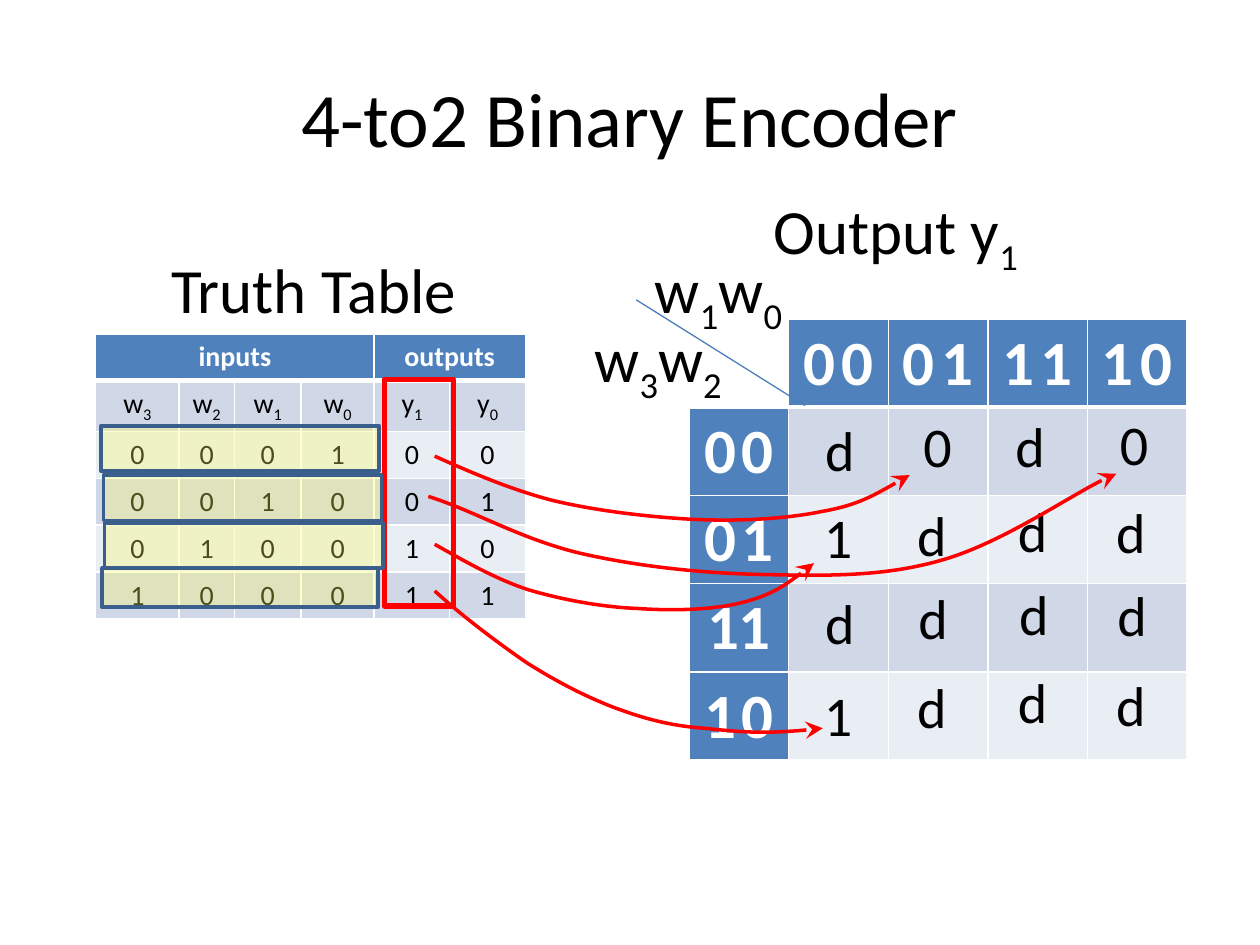
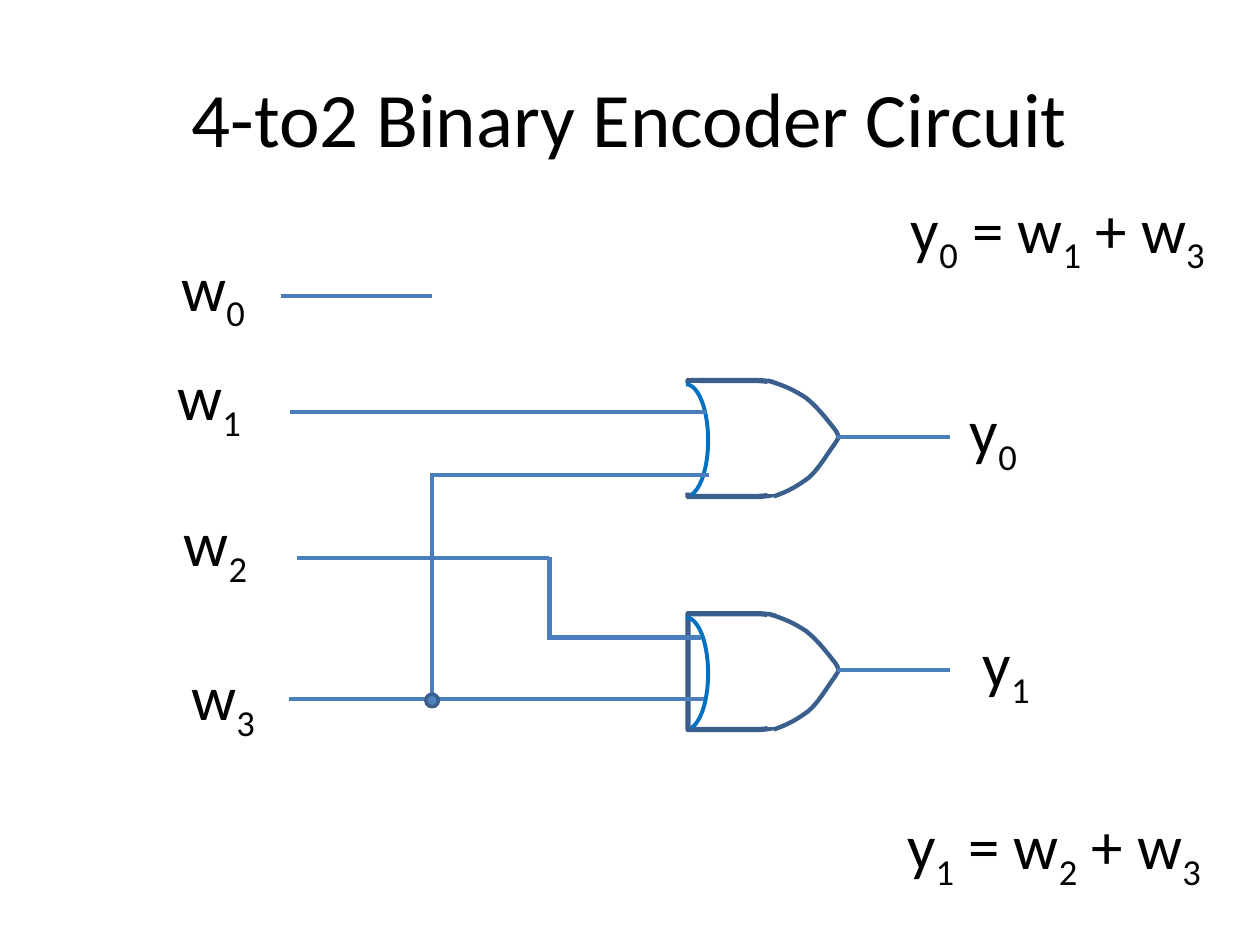
from lxml.etree import SubElement
from pptx import Presentation
from pptx.dml.color import RGBColor as RGB
from pptx.enum.shapes import MSO_CONNECTOR as CONNECTOR, MSO_SHAPE as SHAPE
from pptx.enum.text import MSO_ANCHOR as ANCHOR, PP_ALIGN as ALIGN
from pptx.oxml.ns import qn
from pptx.util import Pt

PX = 9144
FONT = "Calibri"
COLORS = {
    "ink": "000000", "white": "FFFFFF", "header": "4F81BD", "band": "D0D8E8",
    "light": "E9EDF4", "wire": "4B7EBC", "edge": "3A5F8C", "curve": "0070C0",
    "red": "FF0000", "highlight": "FFFF5B",
}


def color(name):
    return RGB.from_string(COLORS[name])


class Deck:
    def __init__(self):
        self.prs = Presentation()
        self.prs.slide_width, self.prs.slide_height = 1000 * PX, 750 * PX
        self.slide = None

    def new_slide(self, heading):
        self.slide = self.prs.slides.add_slide(self.prs.slide_layouts[5])
        title = self.slide.shapes.title
        title.left, title.top, title.width, title.height = (n * PX for n in (50, 30, 900, 125))
        title.text_frame.vertical_anchor = ANCHOR.MIDDLE
        self.put_text(title.text_frame, heading, 44, align=ALIGN.CENTER)

    def put_text(self, frame, text, size, ink="ink", bold=False, align=ALIGN.LEFT, gap=None):
        paragraph = frame.paragraphs[0]
        paragraph.alignment = align
        font = paragraph.font
        font.name, font.size, font.bold = FONT, Pt(size), bold
        font.color.rgb = color(ink)
        if gap:
            for piece in (text[0], " ", text[-1]):
                run = paragraph.add_run()
                run.text = piece
                if piece == " ":
                    run.font.size = Pt(gap)
            return
        first, *indexed = text.split("_")
        paragraph.add_run().text = first
        for part in indexed:
            subscript = paragraph.add_run()
            subscript.text = part[0]
            subscript.font._element.set("baseline", "-25000")
            if part[1:]:
                paragraph.add_run().text = part[1:]

    def label(self, text, left, top, width, height=71, size=36):
        box = self.slide.shapes.add_textbox(left * PX, top * PX, width * PX, height * PX)
        box.text_frame.word_wrap = True
        self.put_text(box.text_frame, text, size)

    def finish(self, shape, fill, line, weight):
        shape.shadow.inherit = False
        if fill:
            shape.fill.solid()
            shape.fill.fore_color.rgb = color(fill)
        else:
            shape.fill.background()
        if line:
            shape.line.color.rgb = color(line)
            shape.line.width = Pt(weight)
        else:
            shape.line.fill.background()
        return shape

    def shape(self, kind, left, top, width, height, fill=None, line=None, weight=2, opacity=None):
        shape = self.slide.shapes.add_shape(kind, left * PX, top * PX, width * PX, height * PX)
        self.finish(shape, fill, line, weight)
        if opacity:
            tint = shape.element.spPr.find(qn("a:solidFill"))[0]
            SubElement(tint, qn("a:alpha"), val=str(opacity * 1000))
        return shape

    def wire(self, x1, y1, x2, y2, weight=2.5):
        wire = self.slide.shapes.add_connector(
            CONNECTOR.STRAIGHT, x1 * PX, y1 * PX, x2 * PX, y2 * PX)
        wire.line.color.rgb = color("wire")
        wire.line.width = Pt(weight)
        SubElement(wire.element.spPr, qn("a:effectLst"))

    def curve(self, points, line, weight, arrow=False):
        builder = self.slide.shapes.build_freeform(*points[0], scale=PX)
        builder.add_line_segments(points[1:], close=False)
        shape = self.finish(builder.convert_to_shape(), None, line, weight)
        outline = shape.element.spPr.find(".//" + qn("a:path"))
        segments = outline.findall(qn("a:lnTo"))
        for start in range(0, len(segments), 3):
            bezier = SubElement(outline, qn("a:cubicBezTo"))
            for segment in segments[start:start + 3]:
                bezier.append(segment[0])
                outline.remove(segment)
        if arrow:
            SubElement(shape.element.spPr.find(qn("a:ln")), qn("a:tailEnd"),
                       type="stealth", w="lg", len="lg")

    def table(self, left, top, widths, rows, row_height):
        table = self.slide.shapes.add_table(
            rows, len(widths), left * PX, top * PX,
            sum(widths) * PX, rows * row_height * PX).table
        for column, width in zip(table.columns, widths):
            column.width = width * PX
        return table

    def cell(self, table, row, column, fill):
        cell = table.cell(row, column)
        weights = {"L": 1, "R": 1, "T": 3 if row == 1 else 1, "B": 1 if row else 3}
        for side, weight in weights.items():
            border = SubElement(cell._tc.get_or_add_tcPr(), qn("a:ln" + side),
                                w=str(Pt(weight)))
            paint = SubElement(border, qn("a:solidFill"))
            SubElement(paint, qn("a:srgbClr"), val=COLORS["white"])
        cell.fill.solid()
        cell.fill.fore_color.rgb = color(fill)
        return cell


def band(row):
    return "band" if row % 2 else "light"


def truth_table(deck):
    rows = [
        ("inputs", "", "", "", "outputs", ""),
        ("w_3", "w_2", "w_1", "w_0", "y_1", "y_0"),
        *("000100", "001001", "010010", "100011"),
    ]
    table = deck.table(76, 265, (66, 44, 53, 58, 60, 60), len(rows), 36)
    table.cell(0, 0).merge(table.cell(0, 3))
    table.cell(0, 4).merge(table.cell(0, 5))
    for r, values in enumerate(rows):
        for c, value in enumerate(values):
            cell = deck.cell(table, r, c, band(r) if r else "header")
            if value:
                deck.put_text(cell.text_frame, value, 16, "ink" if r else "white",
                              not r, ALIGN.CENTER)
            if not r:
                cell.vertical_anchor = ANCHOR.MIDDLE
    deck.label("Truth Table", 126, 194, 252)


def karnaugh_map(deck):
    table = deck.table(547, 253, (79,) * 5, 5, 70)
    headings = {
        (0, 1): ("00", 16), (0, 2): ("01", 18), (0, 3): ("11", 16), (0, 4): ("10", 20),
        (1, 0): ("00", 14), (2, 0): ("01", 14), (3, 0): ("11", None), (4, 0): ("10", 14),
    }
    for r in range(5):
        for c in range(5):
            if (r, c) in headings:
                code, gap = headings[r, c]
                cell = deck.cell(table, r, c, "header")
                cell.vertical_anchor = ANCHOR.MIDDLE
                deck.put_text(cell.text_frame, code, 36, "white", True, ALIGN.CENTER, gap)
            else:
                deck.cell(table, r, c, band(r) if r else "white")
    deck.wire(639, 322, 505, 238, 0.75)
    deck.label("w_1w_0", 510, 194, 136)
    deck.label("w_3w_2", 462, 249, 141)
    deck.label("Output y_1", 604, 147, 228)
    entries = [
        ("d0d0", (645, 723, 796, 879), (325, 322, 322, 320)),
        ("1ddd", (644, 718, 798, 876), (394, 392, 389, 390)),
        ("dddd", (645, 719, 799, 877), (462, 458, 455, 456)),
        ("1ddd", (644, 718, 798, 876), (535, 529, 525, 527)),
    ]
    for values, lefts, tops in entries:
        for value, left, top in zip(values, lefts, tops):
            deck.label(value, left, top, 48, 64, 32)


def mapping_arrows(deck):
    deck.shape(SHAPE.RECTANGLE, 305, 301, 55, 180, line="red", weight=3)
    highlights = [(80, 338, 221, 36), (82, 377, 221, 36), (83, 415, 221, 36), (81, 451, 219, 31)]
    arrows = [
        [(345, 362), (374, 375), (404, 388), (438, 397), (471, 405), (512, 410), (547, 412),
         (583, 414), (623, 412), (652, 406), (681, 401), (701, 389), (722, 377)],
        [(340, 394), (378, 406), (411, 427), (460, 439), (508, 450), (558, 455), (606, 456),
         (654, 457), (700, 458), (746, 445), (793, 432), (860, 386), (886, 376)],
        [(345, 432), (368, 445), (392, 459), (419, 468), (446, 476), (478, 482), (507, 483),
         (535, 485), (567, 484), (590, 478), (613, 472), (630, 460), (646, 447)],
        [(345, 469), (368, 490), (395, 510), (418, 526), (442, 541), (463, 552), (486, 561),
         (510, 570), (531, 576), (559, 578), (587, 581), (610, 583), (653, 578)],
    ]
    for highlight, arrow in zip(highlights, arrows):
        deck.shape(SHAPE.RECTANGLE, *highlight, fill="highlight", line="edge", opacity=30)
        deck.curve(arrow, "red", 2, arrow=True)


def or_gate(deck, top, open_back=False):
    deck.shape(SHAPE.FLOWCHART_DELAY, 546, top, 108, 92, line="edge", weight=3)
    if open_back:
        deck.shape(SHAPE.RECTANGLE, 539, top + 2, 16, 87, fill="white")
    back = deck.shape(SHAPE.ARC, 527, top + 3, 35, 89, line="curve", weight=2.25)
    back.adjustments[1] = 50.54
    deck.shape(SHAPE.RECTANGLE, 609, top, 50, 90, fill="white")
    upper = [(609, 0), (623, 4), (631, 8), (640, 14), (649, 21), (658, 33), (662, 38),
             (666, 43), (665, 45), (666, 44)]
    lower = [(614, 92), (626, 88), (634, 83), (642, 77), (650, 70), (658, 56), (662, 51),
             (666, 45), (666, 44), (666, 44)]
    for edge in (upper, lower):
        deck.curve([(x, top + y) for x, y in edge], "edge", 2.5)
    deck.wire(664, top + 45, 754, top + 45)


def circuit(deck):
    or_gate(deck, 487)
    or_gate(deck, 302, open_back=True)
    wires = [
        (223, 235, 343, 235), (230, 327, 560, 327), (229, 555, 559, 555),
        (343, 555, 343, 375), (343, 377, 563, 377),
        (236, 443, 436, 443), (436, 442, 436, 508), (436, 506, 556, 506),
    ]
    for ends in wires:
        deck.wire(*ends)
    deck.shape(SHAPE.OVAL, 338, 551, 10, 10, fill="header", line="edge")
    signals = [
        ("w_0", 134, 192), ("w_1", 131, 279), ("w_2", 136, 395), ("w_3", 142, 517),
        ("y_0", 760, 306), ("y_1", 770, 491),
    ]
    for signal, left, top in signals:
        deck.label(signal, left, top, 80)
    deck.label("y_0 = w_1 + w_3", 713, 146, 282)
    deck.label("y_1 = w_2 + w_3", 710, 635, 282)


def main():
    deck = Deck()
    deck.new_slide("4-to2 Binary Encoder")
    truth_table(deck)
    karnaugh_map(deck)
    mapping_arrows(deck)
    deck.new_slide("4-to2 Binary Encoder Circuit")
    circuit(deck)
    deck.prs.save("out.pptx")


if __name__ == "__main__":
    main()
